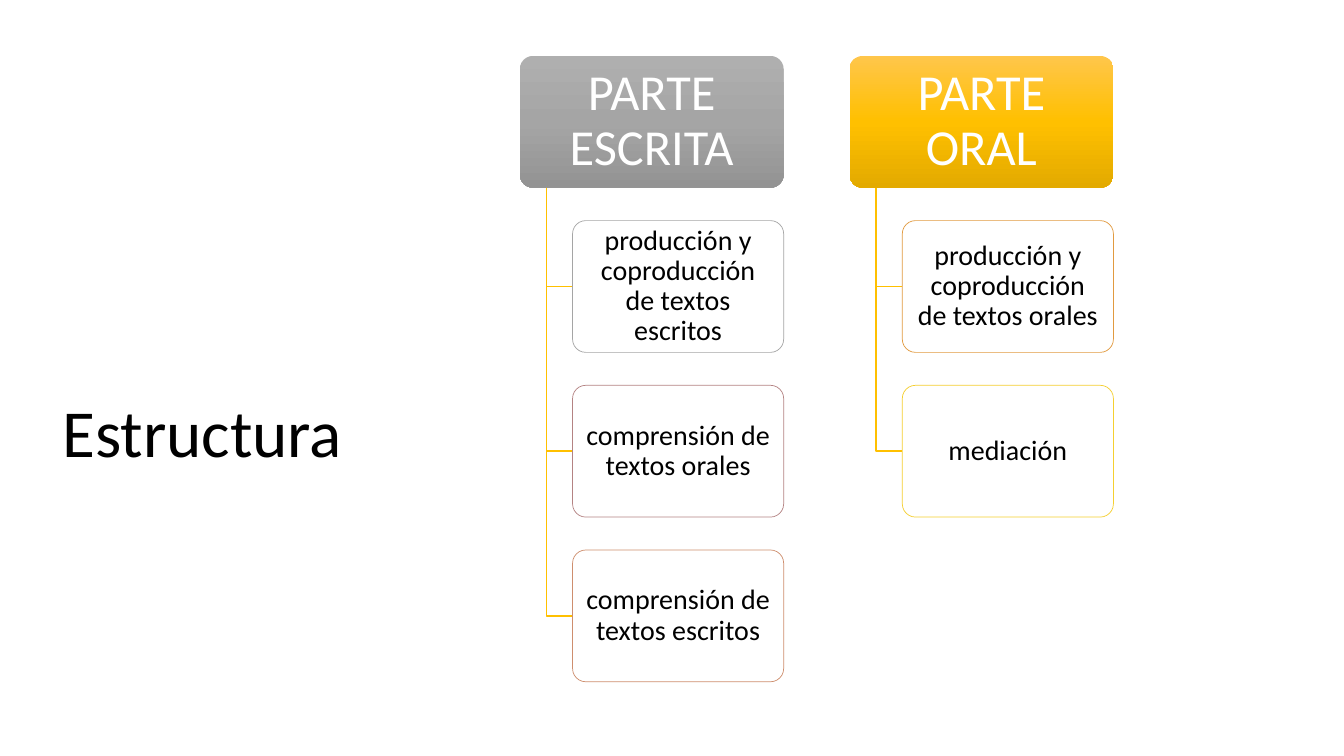
import copy

import pptx
import pptx.dml.color
import pptx.enum.shapes
import pptx.enum.text
import pptx.oxml.ns
import pptx.util

Cm = pptx.util.Cm
Pt = pptx.util.Pt
ALIGN = pptx.enum.text.PP_ALIGN
ANCHOR = pptx.enum.text.MSO_ANCHOR


def rgb(code):
    return pptx.dml.color.RGBColor.from_string(code)


def write(frame, text, size, color, align, anchor):
    frame.word_wrap = True
    frame.auto_size = pptx.enum.text.MSO_AUTO_SIZE.NONE
    frame.vertical_anchor = anchor
    paragraph = frame.paragraphs[0]
    paragraph.alignment = align
    paragraph.line_spacing = 0.9
    run = paragraph.add_run()
    run.text = text
    run.font.name = "Calibri"
    run.font.size = Pt(size)
    run.font.color.rgb = rgb(color)


presentation = pptx.Presentation()
presentation.slide_width = Cm(33.87)
presentation.slide_height = Cm(19.05)
slide = presentation.slides.add_slide(presentation.slide_layouts[5])

heading = slide.shapes.title
heading.left, heading.top = Cm(1.32), Cm(3.12)
heading.width, heading.height = Cm(11.18), Cm(8.89)
write(heading.text_frame, "Estructura", 48, "000000", ALIGN.LEFT, ANCHOR.BOTTOM)

parts = [
    ("PARTE ESCRITA", ["AFAFAF", "A5A5A5", "939393"], [
        ("producción y coproducción de textos escritos", "A5A5A5"),
        ("comprensión de textos orales", "B48383"),
        ("comprensión de textos escritos", "CE8E6E"),
    ]),
    ("PARTE ORAL", ["FFC64B", "FFC000", "E3AA00"], [
        ("producción y coproducción de textos orales", "E19A40"),
        ("mediación", "F5CF30"),
    ]),
]

part_left, part_top = 13.1, 1.41
part_width, box_height = 6.65, 3.32
column_step, row_step = 8.31, 4.15
trunk_offset, task_offset = part_width / 10, part_width / 5
rounded = pptx.enum.shapes.MSO_SHAPE.ROUNDED_RECTANGLE

for column, (part_name, gradient, tasks) in enumerate(parts):
    left = part_left + column * column_step
    part = slide.shapes.add_shape(
        rounded, Cm(left), Cm(part_top), Cm(part_width), Cm(box_height))
    part.adjustments[0] = 0.1
    part.shadow.inherit = False
    part.line.fill.background()
    part.fill.gradient()
    part.fill.gradient_angle = 270
    stops = part._element.spPr.find(".//" + pptx.oxml.ns.qn("a:gsLst"))
    stops.append(copy.deepcopy(stops[0]))
    for index, stop in enumerate(part.fill.gradient_stops):
        stop.position = index / 2
        stop.color.rgb = rgb(gradient[index])
    part.text_frame.margin_left = part.text_frame.margin_right = Cm(0.27)
    part.text_frame.margin_top = part.text_frame.margin_bottom = Cm(0.22)
    write(part.text_frame, part_name, 36, "FFFFFF", ALIGN.CENTER, ANCHOR.MIDDLE)

    trunk_left = left + trunk_offset
    task_left = left + task_offset
    for row, (task_name, outline) in enumerate(tasks, 1):
        task_top = part_top + row * row_step
        task_middle = task_top + box_height / 2
        builder = slide.shapes.build_freeform(
            Cm(trunk_left), Cm(part_top + box_height))
        builder.add_line_segments(
            [(Cm(trunk_left), Cm(task_middle)), (Cm(task_left), Cm(task_middle))],
            close=False)
        branch = builder.convert_to_shape()
        branch.shadow.inherit = False
        branch.fill.background()
        branch.line.color.rgb = rgb("FFC000")
        branch.line.width = Pt(1)

        task = slide.shapes.add_shape(
            rounded, Cm(task_left), Cm(task_top),
            Cm(part_width - task_offset), Cm(box_height))
        task.adjustments[0] = 0.1
        task.shadow.inherit = False
        task.fill.solid()
        task.fill.fore_color.rgb = rgb("FFFFFF")
        task.line.color.rgb = rgb(outline)
        task.line.width = Pt(0.5)
        task.text_frame.margin_left = task.text_frame.margin_right = Cm(0.19)
        task.text_frame.margin_top = task.text_frame.margin_bottom = Cm(0.16)
        write(task.text_frame, task_name, 20, "000000", ALIGN.CENTER, ANCHOR.MIDDLE)

presentation.save("out.pptx")
